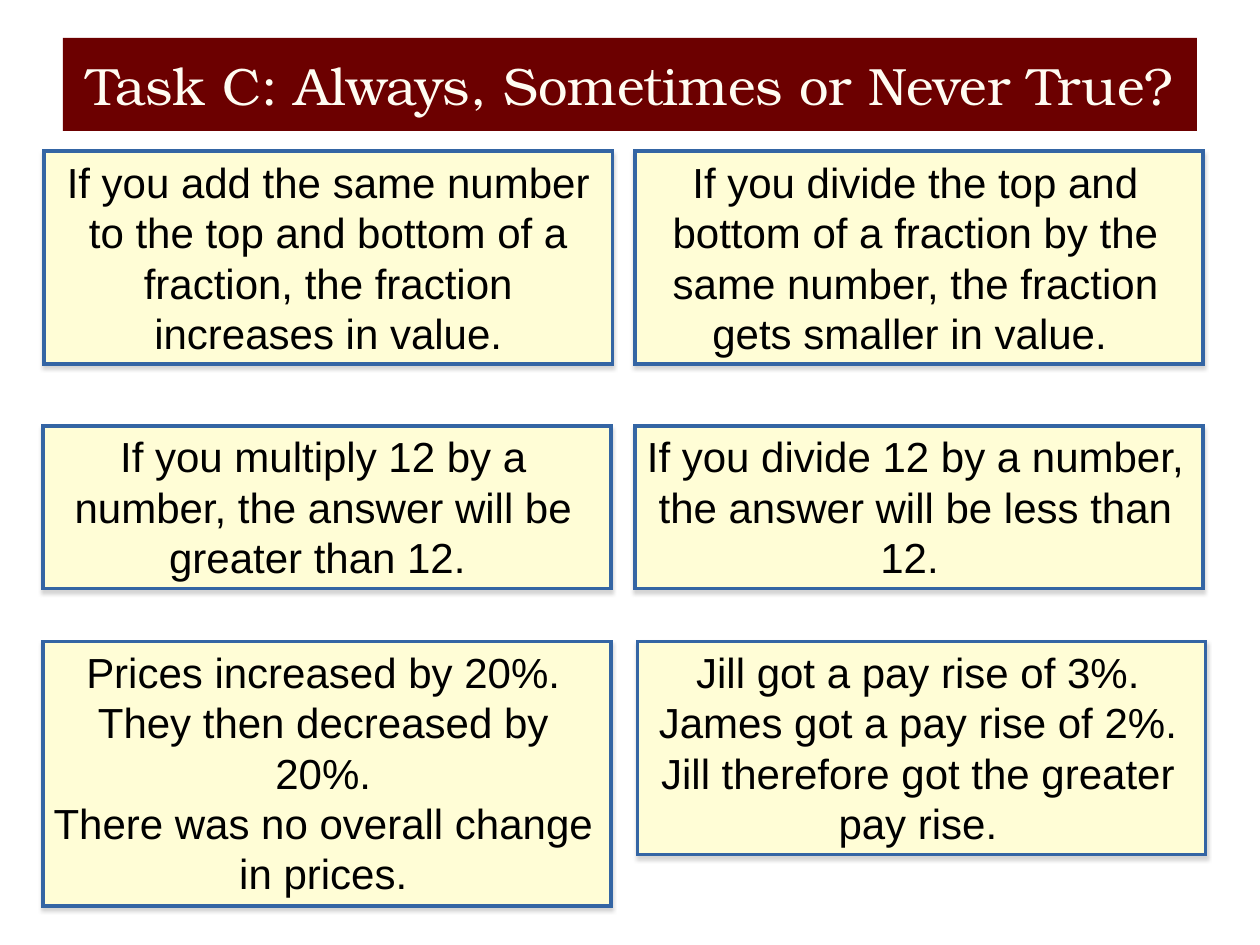
from lxml.etree import fromstring
from pptx import Presentation
from pptx.dml.color import RGBColor
from pptx.enum.shapes import MSO_SHAPE
from pptx.enum.text import MSO_ANCHOR, PP_ALIGN
from pptx.util import Emu, Pt

PX = 9144  # EMU per px, 100 px to the inch
COLORS = {
    "banner": "6C0000",
    "banner_text": "FFFCF2",
    "card": "FFFDD6",
    "border": "3465A4",
    "text": "000000",
    "shadow": "929292",
}
CARD_W, INSET, MARGIN = 451, 4, 6
NS = 'xmlns:a="http://schemas.openxmlformats.org/drawingml/2006/main"'
MITER = f'<a:miter {NS} lim="800000"/>'
SHADOW = (
    f'<a:effectLst {NS}>'
    f'<a:outerShdw blurRad="{Pt(2)}" dist="{Pt(2)}" dir="5400000" rotWithShape="0">'
    f'<a:srgbClr val="{COLORS["shadow"]}"><a:alpha val="38000"/></a:srgbClr>'
    "</a:outerShdw></a:effectLst>"
)

# left, top, height, statement
CARDS = [
    (35, 120, 169, "If you add the same number to the top and bottom of a fraction, "
                   "the fraction increases in value."),
    (504, 120, 169, "If you divide the top and bottom of a fraction by the same number, "
                    "the fraction gets smaller in value. "),
    (504, 338, 129, "If you divide 12 by a number, the answer will be less than 12. "),
    (34, 338, 129, "If you multiply 12 by a number, the answer will be greater than 12. "),
    (34, 509, 210, "Prices increased by 20%.\nThey then decreased by 20%.\n"
                   "There was no overall change in prices."),
    (506, 509, 169, "Jill got a pay rise of 3%.\nJames got a pay rise of 2%.\n"
                    "Jill therefore got the greater pay rise."),
]

prs = Presentation()
prs.slide_width, prs.slide_height = Emu(1000 * PX), Emu(750 * PX)
slide = prs.slides.add_slide(prs.slide_layouts[6])


def add_box(text, box, *, fill, color, font, size, anchor=MSO_ANCHOR.TOP):
    """Add a filled rectangle without outline or shadow, with centred text."""
    sp = slide.shapes.add_shape(MSO_SHAPE.RECTANGLE, *(Emu(n * PX) for n in box))
    sp.shadow.inherit = False
    sp.fill.solid()
    sp.fill.fore_color.rgb = RGBColor.from_string(COLORS[fill])
    sp.line.fill.background()
    tf = sp.text_frame
    tf.word_wrap = True
    tf.vertical_anchor = anchor
    p = tf.paragraphs[0]
    p.text = text
    p.alignment = PP_ALIGN.CENTER
    for r in p.runs:
        r.font.name = font
        r.font.size = Pt(size)
        r.font.color.rgb = RGBColor.from_string(COLORS[color])
    return sp


add_box("Task C: Always, Sometimes or Never True?", (50, 30, 900, 74),
        fill="banner", color="banner_text", font="TeX Gyre Bonum", size=30,
        anchor=MSO_ANCHOR.MIDDLE)

for i, (left, top, height, statement) in enumerate(CARDS):
    sp = add_box(statement, (left, top, CARD_W, height),
                 fill="card", color="text", font="Arial", size=24)
    sp.line.color.rgb = RGBColor.from_string(COLORS["border"])
    sp.line.width = Pt(2)
    spPr = sp.element.spPr
    spPr.find("{*}ln").append(fromstring(MITER))
    spPr.replace(spPr.find("{*}effectLst"), fromstring(SHADOW))
    tf = sp.text_frame
    tf.margin_left = tf.margin_right = Emu(INSET * PX)
    tf.margin_top = tf.margin_bottom = Emu(INSET * PX)
    pPr = tf.paragraphs[0]._p.get_or_add_pPr()
    pPr.set("marR", str(MARGIN * PX))
    if i == 0:
        pPr.set("marL", str(MARGIN * PX))

prs.save("out.pptx")
